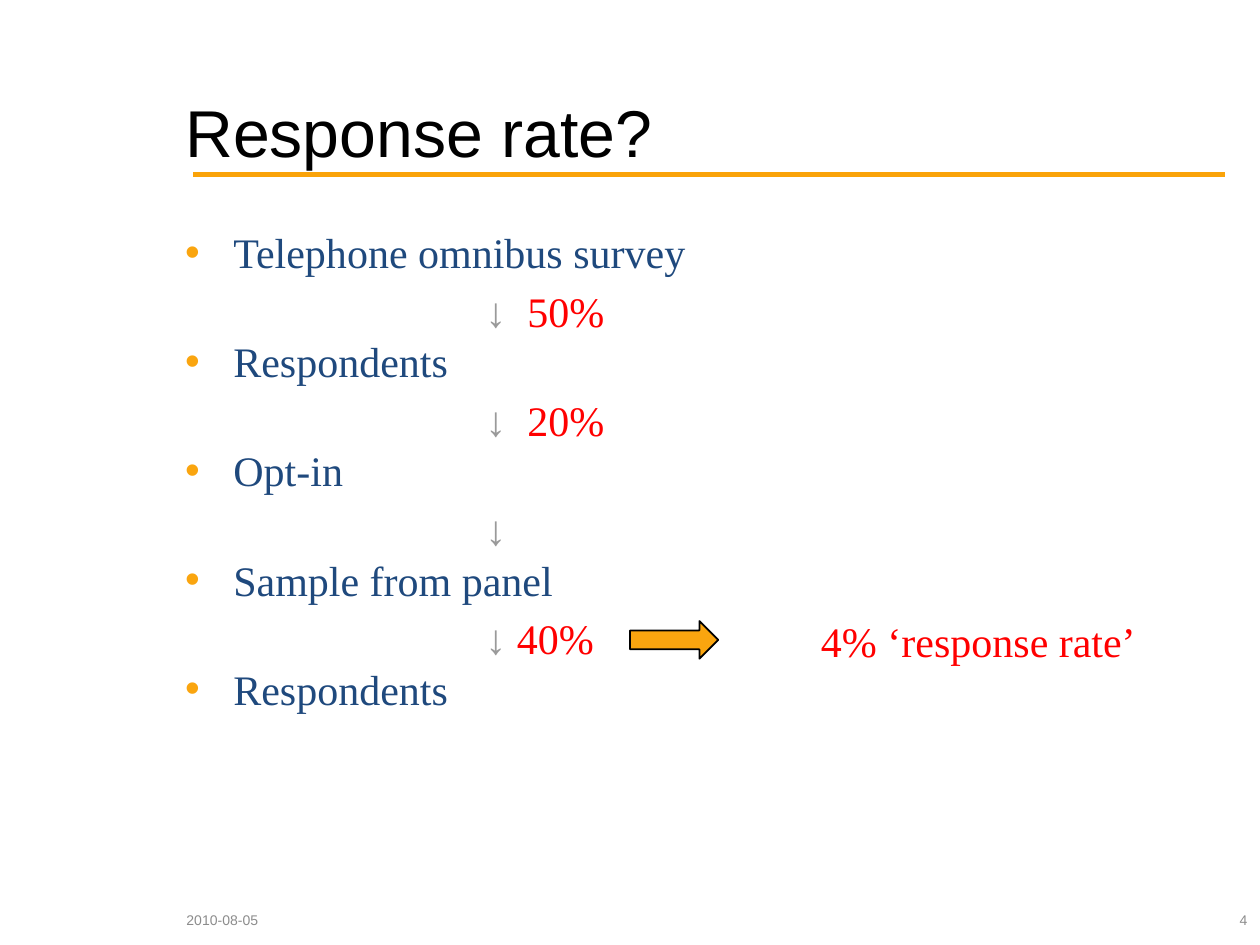
import pptx
import pptx.dml.color
import pptx.enum.shapes
import pptx.enum.text
import pptx.oxml
import pptx.oxml.ns
import pptx.util

Cm = pptx.util.Cm
Pt = pptx.util.Pt
Align = pptx.enum.text.PP_ALIGN
Anchor = pptx.enum.text.MSO_ANCHOR

# Each step with the arrow and the rate that lead to the next one;
# the gaps after the arrows are en and em spaces.
STEPS = [
    ("Telephone omnibus survey", "↓  ", "50%"),
    ("Respondents", "↓  ", "20%"),
    ("Opt-in", "↓", ""),
    ("Sample from panel", "↓ ", "40%"),
    ("Respondents", "", ""),
]


def color(value):
    return pptx.dml.color.RGBColor.from_string(value)


def xml_element(tag, **attributes):
    element = pptx.oxml.parse_xml(f"<a:{tag} {pptx.oxml.ns.nsdecls('a')}/>")
    for name, value in attributes.items():
        element.set(name, str(value))
    return element


class SlideBuilder:
    orange = "FAA50F"
    formats = {
        "title": {"name": "Arial", "size": Pt(37.8), "color": "000000"},
        "step": {"name": "Times New Roman", "size": Pt(24), "color": "1F497D"},
        "arrow": {"name": "Times New Roman", "size": Pt(24), "color": "9A9A9A"},
        "rate": {"name": "Times New Roman", "size": Pt(24), "color": "FF0000"},
        "footer": {"name": "Arial", "size": Pt(8), "color": "8C8C8C"},
    }

    def __init__(self, presentation):
        self.slide = presentation.slides.add_slide(presentation.slide_layouts[1])

    def place(self, shape, left, top, width, height):
        frame = {"left": left, "top": top, "width": width, "height": height}
        for name, value in frame.items():
            setattr(shape, name, Cm(value))

    def add_run(self, paragraph, text, style):
        run = paragraph.add_run()
        run.text = text
        for name, value in self.formats[style].items():
            if name == "color":
                run.font.color.rgb = color(value)
            else:
                setattr(run.font, name, value)

    def set_frame(self, shape, anchor):
        settings = {
            "word_wrap": True,
            "auto_size": pptx.enum.text.MSO_AUTO_SIZE.NONE,
            "vertical_anchor": anchor,
        }
        for name, value in settings.items():
            setattr(shape.text_frame, name, value)

    def add_title(self, text, *frame):
        shape = self.slide.shapes.title
        self.place(shape, *frame)
        self.set_frame(shape, Anchor.MIDDLE)
        paragraph = shape.text_frame.paragraphs[0]
        paragraph.alignment = Align.LEFT
        self.add_run(paragraph, text, "title")

    def add_steps(self, steps, *frame):
        """Fill the body with bulleted steps, each followed by its arrow row."""
        shape = self.slide.placeholders[1]
        self.place(shape, *frame)
        self.set_frame(shape, Anchor.TOP)
        paragraph = shape.text_frame.paragraphs[0]
        for number, (step, arrow, rate) in enumerate(steps):
            if number:
                paragraph = shape.text_frame.add_paragraph()
            self.format_bullet(paragraph)
            self.add_run(paragraph, step, "step")
            if arrow:
                arrow_row = shape.text_frame.add_paragraph()
                self.format_arrow_row(arrow_row)
                self.add_run(arrow_row, arrow, "arrow")
            if rate:
                self.add_run(arrow_row, rate, "rate")

    def set_indent(self, paragraph, margin, indent):
        properties = paragraph._p.get_or_add_pPr()
        properties.set("marL", str(Cm(margin)))
        properties.set("indent", str(Cm(indent)))
        return properties

    def format_bullet(self, paragraph):
        paragraph.space_before = Pt(0)
        properties = self.set_indent(paragraph, 0.97, -0.97)
        bullet_color = xml_element("buClr")
        bullet_color.append(xml_element("srgbClr", val=self.orange))
        properties.append(bullet_color)
        properties.append(xml_element("buFont", typeface="Arial"))
        properties.append(xml_element("buChar", char="•"))

    def format_arrow_row(self, paragraph):
        paragraph.space_before = Pt(4.8)
        properties = self.set_indent(paragraph, 6.05, 0)
        properties.append(xml_element("buNone"))

    def add_text(self, text, style, alignment, *frame):
        shape = self.slide.shapes.add_textbox(*map(Cm, frame))
        self.set_frame(shape, Anchor.MIDDLE)
        paragraph = shape.text_frame.paragraphs[0]
        paragraph.alignment = alignment
        self.add_run(paragraph, text, style)

    def add_block_arrow(self, *frame):
        shape = self.slide.shapes.add_shape(
            pptx.enum.shapes.MSO_SHAPE.RIGHT_ARROW, *map(Cm, frame))
        shape.shadow.inherit = False
        shape.fill.solid()
        shape.fill.fore_color.rgb = color(self.orange)
        shape.line.color.rgb = color("000000")
        shape.line.width = Pt(1)

    def add_rule(self, left, right, top):
        line = self.slide.shapes.add_connector(
            pptx.enum.shapes.MSO_CONNECTOR.STRAIGHT,
            Cm(left), Cm(top), Cm(right), Cm(top))
        line.line.color.rgb = color("FAA309")
        line.line.width = Pt(3)
        line._element.spPr.append(xml_element("effectLst"))


def main():
    presentation = pptx.Presentation()
    presentation.slide_width = Cm(25.4)
    presentation.slide_height = Cm(19.05)
    builder = SlideBuilder(presentation)
    builder.add_title("Response rate?", 3.48, 1.05, 20.65, 3.18)
    builder.add_steps(STEPS, 3.48, 4.44, 20.65, 12.57)
    builder.add_text("4% ‘response rate’", "rate", Align.LEFT, 16.3, 12.32, 7.5, 1.2)
    builder.add_text("2010-08-05", "footer", Align.LEFT, 3.51, 18.03, 3.68, 1.02)
    builder.add_text("4", "footer", Align.RIGHT, 19.48, 18.03, 5.92, 1.02)
    builder.add_block_arrow(12.7, 12.52, 1.78, 0.76)
    builder.add_rule(3.9, 24.69, 3.52)
    presentation.save("out.pptx")


if __name__ == "__main__":
    main()
